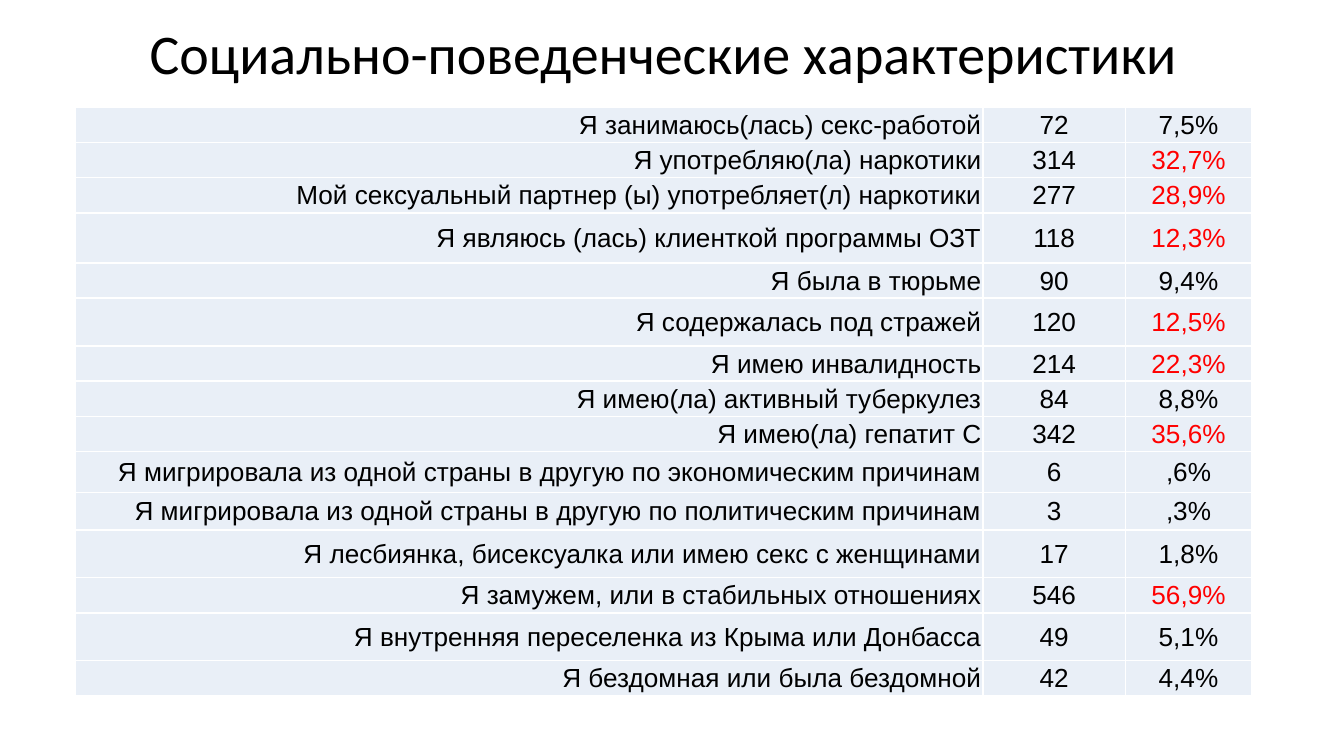
from lxml.etree import SubElement
from pptx import Presentation
from pptx.dml.color import RGBColor
from pptx.enum.text import MSO_ANCHOR as Anchor, PP_ALIGN as Align
from pptx.oxml.ns import qn
from pptx.util import Pt

COLORS = {"text": "000000", "highlight": "FF0000", "cell": "E9EFF7", "border": "FFFFFF"}
HIGHLIGHT_ABOVE = 10  # percent
COLUMN_WIDTHS = (486, 76.5, 67.5)
COLUMN_ALIGNMENTS = (Align.RIGHT, Align.CENTER, Align.CENTER)
LINE = 18.8  # height of a compact row
TALL = 25.7

# label, count, share, row height
ROWS = [
    ("Я занимаюсь(лась) секс-работой", "72", "7,5%", LINE),
    ("Я употребляю(ла) наркотики", "314", "32,7%", LINE),
    ("Мой сексуальный партнер (ы) употребляет(л) наркотики", "277", "28,9%", LINE),
    ("Я являюсь (лась) клиенткой программы ОЗТ", "118", "12,3%", 27),
    ("Я была в тюрьме", "90", "9,4%", LINE),
    ("Я содержалась под стражей", "120", "12,5%", TALL),
    ("Я имею инвалидность", "214", "22,3%", LINE),
    ("Я имею(ла) активный туберкулез", "84", "8,8%", LINE),
    ("Я имею(ла) гепатит С", "342", "35,6%", LINE),
    ("Я мигрировала из одной страны в другую по экономическим причинам", "6", ",6%", 22),
    ("Я мигрировала из одной страны в другую по политическим причинам", "3", ",3%", 20),
    ("Я лесбиянка, бисексуалка или имею секс с женщинами", "17", "1,8%", TALL),
    ("Я замужем, или в стабильных отношениях", "546", "56,9%", LINE),
    ("Я внутренняя переселенка из Крыма или Донбасса", "49", "5,1%", TALL),
    ("Я бездомная или была бездомной", "42", "4,4%", LINE),
]


def set_values(target, values):
    for name, value in values.items():
        setattr(target, name, value)


def share_color(share):
    percent = float(share.rstrip("%").replace(",", "."))
    return "highlight" if percent > HIGHLIGHT_ABOVE else "text"


class SlideBuilder:
    """Holds the text style and the slide being filled."""

    title_font = {"name": "Calibri", "size": Pt(30), "bold": False}
    cell_font = {"name": "Arial", "size": Pt(14), "bold": False}
    title_frame = {"word_wrap": True, "vertical_anchor": Anchor.MIDDLE,
                   "margin_left": Pt(5), "margin_right": Pt(5),
                   "margin_top": Pt(2.7), "margin_bottom": Pt(2.7)}
    cell_frame = {"vertical_anchor": Anchor.MIDDLE, "margin_left": Pt(0.7),
                  "margin_right": Pt(0.7), "margin_top": Pt(0.7), "margin_bottom": 0}

    def __init__(self, slide):
        self.slide = slide

    def add_text(self, paragraph, text, font, alignment, color="text"):
        paragraph.alignment = alignment
        run = paragraph.add_run()
        run.text = text
        set_values(run.font, font)
        run.font.color.rgb = RGBColor.from_string(COLORS[color])

    def add_title(self, text, left, top, width, height):
        shape = self.slide.shapes.add_textbox(Pt(left), Pt(top), Pt(width), Pt(height))
        set_values(shape.text_frame, self.title_frame)
        paragraph = shape.text_frame.paragraphs[0]
        paragraph.line_spacing = 0.9
        self.add_text(paragraph, text, self.title_font, Align.CENTER)

    def add_table(self, rows, left, top):
        heights = [row[-1] for row in rows]
        table = self.slide.shapes.add_table(
            len(rows), len(COLUMN_WIDTHS), Pt(left), Pt(top),
            Pt(sum(COLUMN_WIDTHS)), Pt(sum(heights))).table
        set_values(table, {"first_row": False, "horz_banding": False})
        for column, width in zip(table.columns, COLUMN_WIDTHS):
            column.width = Pt(width)
        for table_row, (label, count, share, height) in zip(table.rows, rows):
            table_row.height = Pt(height)
            colors = ("text", "text", share_color(share))
            for cell, text, alignment, color in zip(
                    table_row.cells, (label, count, share), COLUMN_ALIGNMENTS, colors):
                self.style_cell(cell)
                self.add_text(cell.text_frame.paragraphs[0], text,
                              self.cell_font, alignment, color)

    def style_cell(self, cell):
        set_values(cell, self.cell_frame)
        properties = cell._tc.get_or_add_tcPr()
        for side in ("L", "R", "T", "B"):
            border = SubElement(properties, qn(f"a:ln{side}"), w=str(Pt(1)))
            fill = SubElement(border, qn("a:solidFill"))
            SubElement(fill, qn("a:srgbClr"), val=COLORS["border"])
        cell.fill.solid()
        cell.fill.fore_color.rgb = RGBColor.from_string(COLORS["cell"])


def main():
    presentation = Presentation()
    set_values(presentation, {"slide_width": Pt(720), "slide_height": Pt(405)})
    builder = SlideBuilder(presentation.slides.add_slide(presentation.slide_layouts[6]))
    builder.add_title("Социально-поведенческие характеристики", 40.5, 21.6, 630, 17.3)
    builder.add_table(ROWS, 40.5, 57.6)
    presentation.save("out.pptx")


if __name__ == "__main__":
    main()
